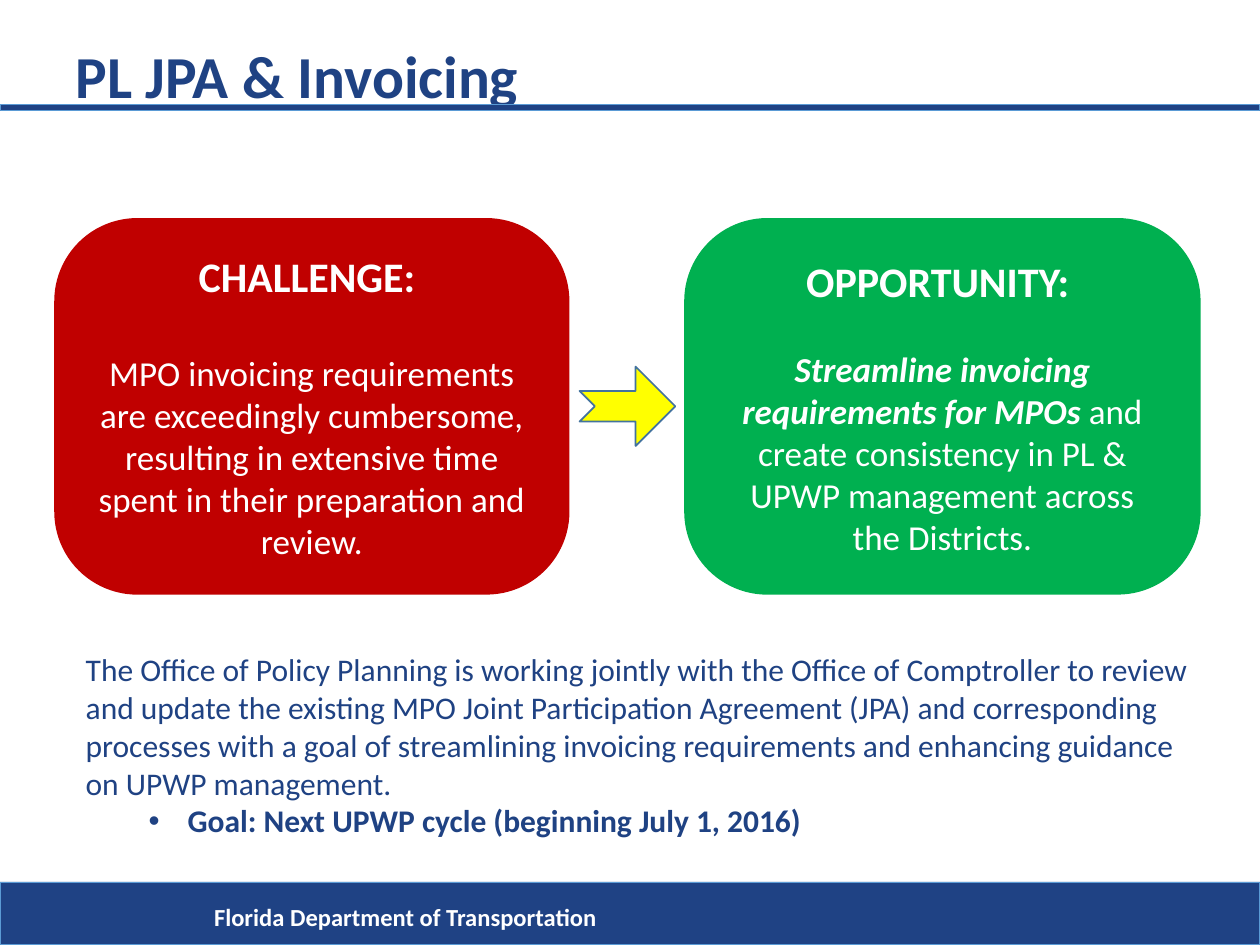
from dataclasses import dataclass

from lxml import etree
from pptx import Presentation
from pptx import util as u
from pptx.dml.color import RGBColor
from pptx.enum import shapes, text
from pptx.oxml.ns import qn

FONT = "Calibri"
NAVY_TEXT, NAVY_BAR, BAR_EDGE, WHITE = "1F4283", "1F4284", "5B9BD5", "FFFFFF"
Box = tuple[float, float, float, float]


@dataclass
class Phrase:
    wording: str
    bold: bool = False
    italic: bool = False


@dataclass
class Panel:
    box: Box
    color: str
    heading: str
    gap: float
    phrases: list[Phrase]


PANELS = [
    Panel((0.5, 1.8, 3.95, 2.85), "C00000", "CHALLENGE: ", 29, [
        Phrase("MPO invoicing requirements are exceedingly cumbersome, resulting in "
               "extensive time spent in their preparation and review."),
    ]),
    Panel((5.5, 1.8, 3.96, 2.85), "00B050", "OPPORTUNITY: ", 24, [
        Phrase("Streamline invoicing requirements for MPOs", bold=True, italic=True),
        Phrase(" and create consistency in PL & UPWP management across the Districts."),
    ]),
]


def rgb(color: str) -> RGBColor:
    return RGBColor.from_string(color)


def place(shape, box: Box) -> None:
    shape.left, shape.top, shape.width, shape.height = map(u.Inches, box)


def add_run(paragraph, phrase: Phrase, size: float, color: str) -> None:
    run = paragraph.add_run()
    run.text = phrase.wording
    font = run.font
    font.name, font.size = FONT, u.Pt(size)
    font.bold, font.italic = phrase.bold, phrase.italic
    font.color.rgb = rgb(color)


def add_filled(slide, kind, box: Box, fill: str, line: str, line_width: float):
    shape = slide.shapes.add_shape(kind, *map(u.Inches, box))
    shape.shadow.inherit = False
    shape.fill.solid()
    shape.fill.fore_color.rgb = rgb(fill)
    shape.line.color.rgb = rgb(line)
    shape.line.width = u.Pt(line_width)
    return shape


def add_bar(slide, top: float, height: float) -> None:
    add_filled(slide, shapes.MSO_SHAPE.RECTANGLE, (0, top, 10, height),
               NAVY_BAR, BAR_EDGE, 0.5)


def add_panel(slide, panel: Panel) -> None:
    shape = add_filled(slide, shapes.MSO_SHAPE.ROUNDED_RECTANGLE, panel.box,
                       panel.color, panel.color, 10)
    shape.adjustments[0] = 0.207
    frame = shape.text_frame
    frame.word_wrap = True
    frame.vertical_anchor = text.MSO_ANCHOR.MIDDLE
    heading, body = frame.paragraphs[0], frame.add_paragraph()
    heading.alignment = body.alignment = text.PP_ALIGN.CENTER
    heading.space_after = u.Pt(panel.gap)
    add_run(heading, Phrase(panel.heading, bold=True), 24, WHITE)
    for phrase in panel.phrases:
        add_run(body, phrase, 20, WHITE)


def set_bullet(paragraph, margin: float, indent: float, symbol: str = "") -> None:
    """Set the indents, with the given bullet or none."""
    properties = paragraph._p.get_or_add_pPr()
    properties.set("marL", str(u.Inches(margin)))
    properties.set("indent", str(u.Inches(indent)))
    if symbol:
        etree.SubElement(properties, qn("a:buFont")).set("typeface", "Arial")
        etree.SubElement(properties, qn("a:buChar")).set("char", symbol)
    else:
        etree.SubElement(properties, qn("a:buNone"))


def fill_title(slide) -> None:
    title = slide.shapes.title
    place(title, (0.5, 0, 9, 1.25))
    frame = title.text_frame
    frame.auto_size = text.MSO_AUTO_SIZE.NONE
    frame.vertical_anchor = text.MSO_ANCHOR.MIDDLE
    paragraph = frame.paragraphs[0]
    paragraph.alignment = text.PP_ALIGN.LEFT
    paragraph.line_spacing = 0.9
    add_run(paragraph, Phrase("PL JPA & Invoicing", bold=True), 34, NAVY_TEXT)


def fill_body(slide) -> None:
    body = slide.placeholders[1]
    place(body, (0.58, 5.11, 9, 1.62))
    frame = body.text_frame
    frame.auto_size = text.MSO_AUTO_SIZE.NONE
    summary, goal = frame.paragraphs[0], frame.add_paragraph()
    goal.level = 1
    summary.space_before = goal.space_before = u.Pt(0)
    set_bullet(summary, 0, 0)
    set_bullet(goal, 0.81, -0.31, "•")
    add_run(summary, Phrase(
        "The Office of Policy Planning is working jointly with the Office of Comptroller "
        "to review and update the existing MPO Joint Participation Agreement (JPA) and "
        "corresponding processes with a goal of streamlining invoicing requirements and "
        "enhancing guidance on UPWP management."), 18, NAVY_TEXT)
    add_run(goal, Phrase("Goal: Next UPWP cycle (beginning July 1, 2016)", bold=True),
            18, NAVY_TEXT)


def add_footer(slide) -> None:
    add_bar(slide, 7, 0.5)
    footer = slide.shapes.add_textbox(*map(u.Inches, (1.6, 7.11, 7.98, 0.34)))
    footer.text_frame.word_wrap = True
    add_run(footer.text_frame.paragraphs[0],
            Phrase("Florida Department of Transportation", bold=True), 14, WHITE)


def main() -> None:
    presentation = Presentation()
    presentation.slide_width, presentation.slide_height = u.Inches(10), u.Inches(7.5)
    slide = presentation.slides.add_slide(presentation.slide_layouts[1])
    fill_title(slide)
    fill_body(slide)
    add_footer(slide)
    add_bar(slide, 0.83, 0.05)
    for panel in PANELS:
        add_panel(slide, panel)
    arrow = add_filled(slide, shapes.MSO_SHAPE.NOTCHED_RIGHT_ARROW,
                       (4.6, 2.91, 0.76, 0.63), "FFFF00", "43739E", 1)
    arrow.adjustments[0] = 0.386
    arrow.adjustments[1] = 0.5
    presentation.save("out.pptx")


if __name__ == "__main__":
    main()
